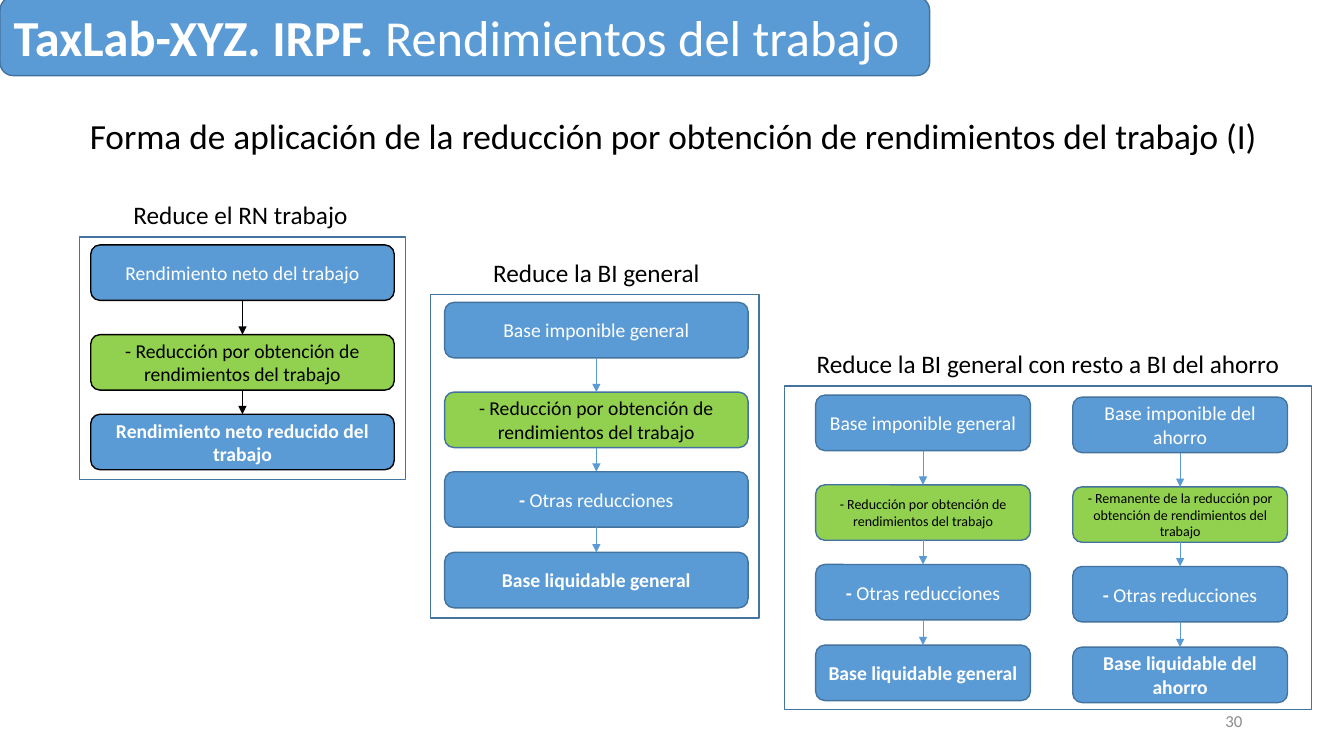
from lxml.etree import SubElement
from pptx import Presentation
from pptx.dml.color import RGBColor
from pptx.enum.shapes import MSO_CONNECTOR, MSO_SHAPE
from pptx.enum.text import MSO_ANCHOR, MSO_AUTO_SIZE, PP_ALIGN
from pptx.oxml.ns import qn
from pptx.util import Inches, Pt

BLUE = RGBColor(0x5B, 0x9B, 0xD5)
EDGE = RGBColor(0x43, 0x73, 0x9E)
GREEN = RGBColor(0x92, 0xD0, 0x50)
BLACK = RGBColor(0, 0, 0)
WHITE = RGBColor(0xFF, 0xFF, 0xFF)
GRAY = RGBColor(0x8C, 0x8C, 0x8C)

BOX_H = 0.55
STEPS = [0, 0.89, 1.68, 2.48]
REDUCTION = "- Reducción por obtención de rendimientos del trabajo"
OTHER = [("- ", True), ("Otras reducciones", False)]


class Deck:
    font = "Calibri"

    def __init__(self, s):
        self.s = s
        self.shapes = s.shapes

    def fill_text(self, sp, runs, size, color, align=PP_ALIGN.CENTER, anchor=MSO_ANCHOR.MIDDLE):
        tf = sp.text_frame
        tf.word_wrap = True
        tf.auto_size = MSO_AUTO_SIZE.NONE
        tf.vertical_anchor = anchor
        p = tf.paragraphs[0]
        p.alignment = align
        for text, bold in runs:
            r = p.add_run()
            r.text = text
            r.font.name = self.font
            r.font.size = Pt(size)
            r.font.bold = bold
            r.font.color.rgb = color
        return p

    def title(self, text, x, y, w, h):
        sp = self.s.shapes.title
        sp.left, sp.top, sp.width, sp.height = map(Inches, (x, y, w, h))
        p = self.fill_text(sp, [(text, False)], 25.2, BLACK, PP_ALIGN.LEFT)
        p.line_spacing = 0.9

    def label(self, text, x, y, w, size=18, color=BLACK, align=PP_ALIGN.CENTER,
              anchor=MSO_ANCHOR.TOP):
        sp = self.shapes.add_textbox(Inches(x), Inches(y), Inches(w), Inches(0.4))
        self.fill_text(sp, [(text, False)], size, color, align, anchor)

    def shape(self, kind, x, y, w, h, fill=None, line=EDGE):
        sp = self.shapes.add_shape(kind, Inches(x), Inches(y), Inches(w), Inches(h))
        sp.shadow.inherit = False
        if fill is None:
            sp.fill.background()
        else:
            sp.fill.solid()
            sp.fill.fore_color.rgb = fill
        sp.line.color.rgb = line
        sp.line.width = Pt(1)
        return sp

    def banner(self, runs, x, y, w, h):
        sp = self.shape(MSO_SHAPE.ROUNDED_RECTANGLE, x, y, w, h, BLUE)
        self.fill_text(sp, runs, 36, WHITE, PP_ALIGN.LEFT)

    def arrow(self, x, top, bottom, color):
        c = self.shapes.add_connector(MSO_CONNECTOR.STRAIGHT, Inches(x), Inches(top),
                                      Inches(x), Inches(bottom))
        c.line.color.rgb = color
        c.line.width = Pt(0.5)
        props = c._element.spPr
        SubElement(props.find(qn("a:ln")), qn("a:tailEnd"), type="triangle")
        SubElement(props, qn("a:effectLst"))

    def panel(self, heading, heading_x, heading_y, x, y, w, h, heading_w):
        self.shapes = self.s.shapes.add_group_shape().shapes
        self.shape(MSO_SHAPE.RECTANGLE, x, y, w, h)
        self.label(heading, heading_x, heading_y, heading_w)

    def flow(self, x, y, w, steps, green_size=14, line=EDGE, arrow=BLUE):
        for i, (runs, dy) in enumerate(zip(steps, STEPS)):
            green = i == 1
            sp = self.shape(MSO_SHAPE.ROUNDED_RECTANGLE, x, y + dy, w, BOX_H,
                            GREEN if green else BLUE, line)
            self.fill_text(sp, runs, green_size if green else 14, BLACK if green else WHITE)
            if i:
                self.arrow(x + w / 2, y + STEPS[i - 1] + BOX_H, y + dy, arrow)


def chain(start, reduction, *rest):
    return [[(start, False)], [(reduction, False)], *rest]


def main():
    prs = Presentation()
    prs.slide_width, prs.slide_height = Inches(13.33), Inches(7.5)
    deck = Deck(prs.slides.add_slide(prs.slide_layouts[5]))

    deck.title("Forma de aplicación de la reducción por obtención de rendimientos del trabajo (I)",
               0.79, 1.08, 11.82, 0.57)
    deck.label("30", 9.42, 6.95, 3, 12, GRAY, PP_ALIGN.RIGHT, MSO_ANCHOR.MIDDLE)
    deck.banner([("TaxLab-XYZ. IRPF. ", True), ("Rendimientos del trabajo", False)],
                0, -0.03, 9.22, 0.78)

    deck.panel("Reduce el RN trabajo", 0.77, 1.93, 0.79, 2.35, 3.23, 2.41, 3.23)
    deck.flow(0.9, 2.43, 3.01,
              chain("Rendimiento neto del trabajo", REDUCTION,
                    [("Rendimiento neto reducido del trabajo", True)]),
              line=BLACK, arrow=BLACK)

    general = chain("Base imponible general", REDUCTION, OTHER,
                    [("Base liquidable general", True)])
    savings = chain("Base imponible del ahorro",
                    "- Remanente de la reducción por obtención de rendimientos del trabajo",
                    OTHER, [("Base liquidable del ahorro", True)])

    deck.panel("Reduce la BI general", 4.3, 2.5, 4.27, 2.92, 3.26, 3.21, 3.23)
    deck.flow(4.41, 3, 3.01, general)

    deck.panel("Reduce la BI general con resto a BI del ahorro",
               7.78, 3.41, 7.78, 3.83, 5.23, 3.21, 5.23)
    deck.flow(8.09, 3.92, 2.13, general, 10)
    deck.flow(10.64, 3.94, 2.13, savings, 10)

    prs.save("out.pptx")


if __name__ == "__main__":
    main()
